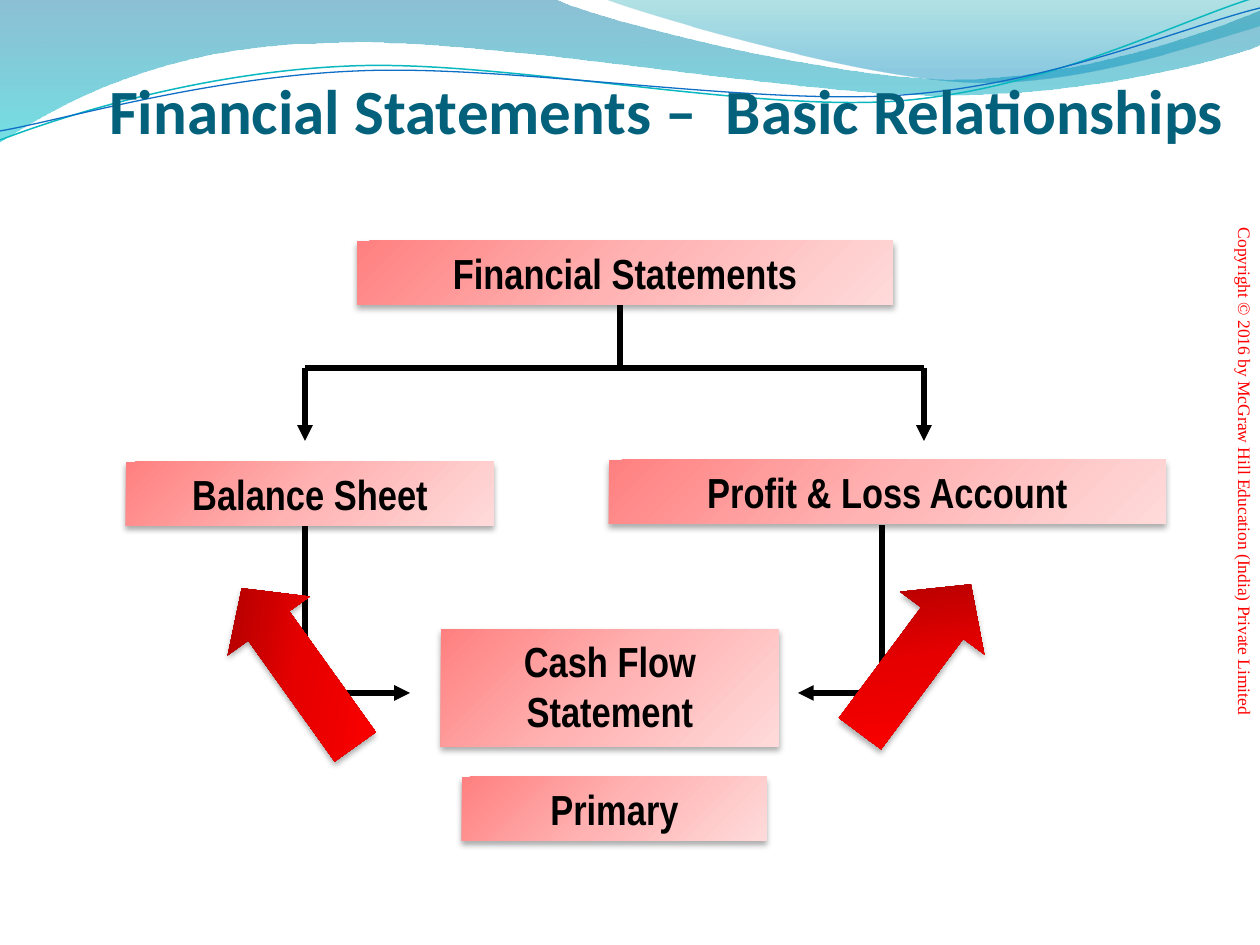
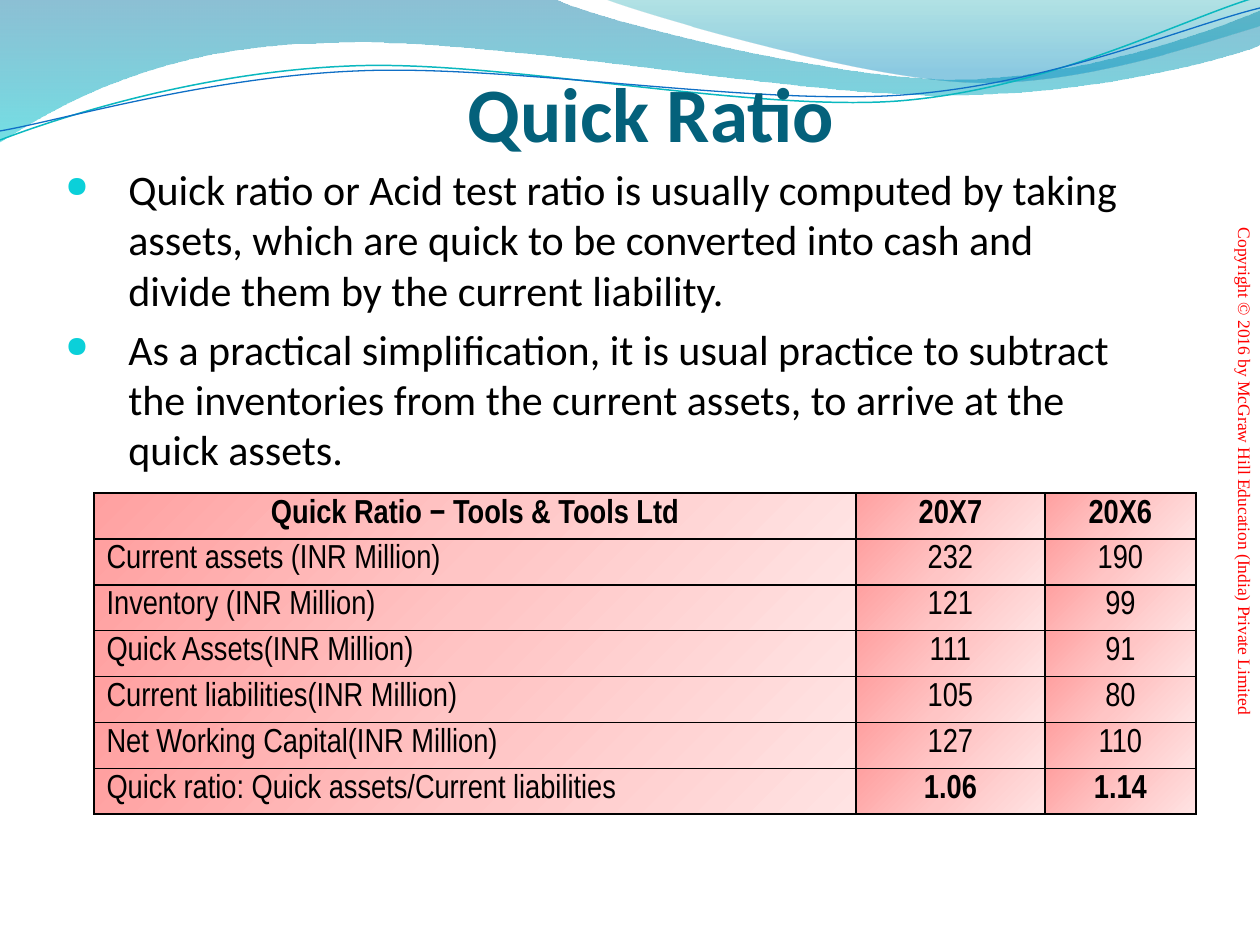
from lxml import etree
from pptx import Presentation
from pptx import util as u
from pptx.dml.color import RGBColor
from pptx.enum import shapes, text
from pptx.oxml.ns import qn

PX = 7257  # EMU in one px, 126 px to the inch

BLACK = RGBColor(0x00, 0x00, 0x00)
RED = RGBColor(0xFF, 0x00, 0x00)
TITLE_BLUE = RGBColor(0x04, 0x61, 0x7B)
BULLET = RGBColor(0x0B, 0xD0, 0xD9)
TEAL_LINE = RGBColor(0x0A, 0xB8, 0xBF)
BLUE_LINE = RGBColor(0x0F, 0x6F, 0xC6)

# Gradient stops: position, colour, opacity (both in percent)
WIDE_WAVE = [(0, RGBColor(0x00, 0x74, 0xA1), 45), (100, RGBColor(0x00, 0xC6, 0xCF), 55)]
RIGHT_WAVE = [(0, RGBColor(0x00, 0xA1, 0xA9), 30), (80, RGBColor(0x00, 0x8B, 0xBF), 45)]
PINK = [(0, RGBColor(0xFF, 0x80, 0x80), 100), (50, RGBColor(0xFF, 0xB3, 0xB3), 100),
        (100, RGBColor(0xFF, 0xDA, 0xDA), 100)]
PALE_PINK = [(0, RGBColor(0xFF, 0xA0, 0xA0), 100), (50, RGBColor(0xFF, 0xC5, 0xC5), 100),
             (100, RGBColor(0xFF, 0xE3, 0xE3), 100)]
DEEP_RED = [(0, RGBColor(0xA0, 0x00, 0x00), 100), (50, RGBColor(0xE6, 0x00, 0x00), 100),
            (100, RED, 100)]


def set_gradient(filled, props, stops, angle):
    """Give a shape or cell, with its spPr or tcPr, a linear gradient."""
    filled.fill.background()
    grad = etree.Element(qn("a:gradFill"), rotWithShape="1")
    gs_list = etree.SubElement(grad, qn("a:gsLst"))
    for pos, color, opacity in stops:
        gs = etree.SubElement(gs_list, qn("a:gs"), pos=str(pos * 1000))
        clr = etree.SubElement(gs, qn("a:srgbClr"), val=str(color))
        if opacity < 100:
            etree.SubElement(clr, qn("a:alpha"), val=str(opacity * 1000))
    etree.SubElement(grad, qn("a:lin"), ang=str(angle * 60000), scaled="0")
    props.replace(props.find(qn("a:noFill")), grad)


def set_font(p, name, size, color, bold=False):
    for r in p.runs:
        r.font.name = name
        r.font.size = u.Pt(size)
        r.font.bold = bold
        r.font.color.rgb = color


prs = Presentation()
prs.slide_width, prs.slide_height = u.Inches(10), u.Inches(7.5)
layout = prs.slide_layouts[5]
slides = []

# Titles
titles = [("Financial Statements –  Basic Relationships", 36, (-116, -10, 1565, 157)),
          ("Quick Ratio", 44, (84, 0, 1134, 158))]
for wording, size, box in titles:
    slide = prs.slides.add_slide(layout)
    slides.append(slide)
    title = slide.shapes.title
    title.left, title.top, title.width, title.height = [n * PX for n in box]
    tf = title.text_frame
    tf.text = wording
    tf.auto_size = text.MSO_AUTO_SIZE.NONE
    tf.vertical_anchor = text.MSO_ANCHOR.BOTTOM
    tf.margin_left = tf.margin_right = tf.margin_bottom = 0
    tf.margin_top = u.Inches(0.05)
    tf.paragraphs[0].alignment = text.PP_ALIGN.CENTER
    set_font(tf.paragraphs[0], "Calibri", size, TITLE_BLUE, True)

chart, ratio = slides

# Waves: a start, then straight (2 numbers) or Bézier (6 numbers) segments
waves = [
    (WIDE_WAVE, None, 0, (0, 0), [
        (554, -1), (600, 21, 837, 79, 955, 79), (1075, 79, 1207, 33, 1260, 11),
        (1261, 45), (1239, 55, 1096, 96, 940, 95), (784, 95, 481, 35, 324, 43),
        (163, 45, 58, 105, -1, 142)]),
    (RIGHT_WAVE, None, 0, (604, -1), [
        (641, 14, 859, 78, 969, 82), (1079, 87, 1211, 40, 1260, 26), (1260, 0)]),
    (None, TEAL_LINE, 0.85, (0, 140), [
        (60, 117, 199, 72, 349, 66), (498, 59, 747, 112, 898, 101),
        (1050, 89, 1182, 19, 1257, -3)]),
    (None, BLUE_LINE, 0.75, (0, 131), [
        (59, 121, 207, 77, 357, 71), (508, 64, 752, 106, 903, 95),
        (1053, 84, 1186, 26, 1260, 8)]),
]
shared = []
for stops, line_color, line_width, start, segments in waves:
    points = [seg[i:i + 2] for seg in segments for i in range(0, len(seg), 2)]
    builder = chart.shapes.build_freeform(*start, scale=PX)
    builder.add_line_segments(points, close=stops is not None)
    sp = builder.convert_to_shape()
    sp.shadow.inherit = False
    # Join the three points of each Bézier segment into one curve
    straight = iter(list(sp._element.iter(qn("a:lnTo"))))
    for seg in segments:
        steps = [next(straight) for _ in range(len(seg) // 2)]
        if len(steps) == 3:
            curve = etree.Element(qn("a:cubicBezTo"))
            steps[0].addprevious(curve)
            for step in steps:
                curve.append(step[0])
                step.getparent().remove(step)
    if stops:
        set_gradient(sp, sp._element.spPr, stops, 90)
        sp.line.fill.background()
    else:
        sp.fill.background()
        sp.line.color.rgb = line_color
        sp.line.width = u.Pt(line_width)
    shared.append(sp)

# Copyright line down the right edge
sp = chart.shapes.add_textbox(*[n * PX for n in (861, 440, 798, 63)])
sp.rotation = 90
tf = sp.text_frame
tf.word_wrap = True
tf.vertical_anchor = text.MSO_ANCHOR.BOTTOM
tf.text = "Copyright © 2016 by McGraw Hill Education (India) Private Limited"
tf.paragraphs[0].alignment = text.PP_ALIGN.CENTER
set_font(tf.paragraphs[0], "Times New Roman", 10, RED)
shared.append(sp)

# Both slides take the waves and the copyright line from their layout
for sp in shared:
    layout.shapes._spTree.append(sp._element)

# Slide 1: statement boxes, flow lines and block arrows
RECT, UP = shapes.MSO_SHAPE.RECTANGLE, shapes.MSO_SHAPE.UP_ARROW
statements = [
    ("Financial Statements", RECT, PINK, 0, (357, 241, 536, 64)),
    ("Cash Flow Statement", RECT, PINK, 0, (441, 629, 338, 118)),
    ("Profit & Loss Account", RECT, PINK, 0, (609, 460, 557, 64)),
    ("Balance Sheet", RECT, PINK, 0, (126, 462, 368, 64)),
    ("Primary", RECT, PINK, 0, (462, 777, 305, 64)),
]
block_arrows = [
    ("", UP, DEEP_RED, 324.4, (248, 570, 101, 195)),
    ("", UP, DEEP_RED, 36.6, (863, 566, 105, 186)),
]
flow_lines = [  # from x, y to x, y, arrowhead
    (305, 368, 924, 368, False), (620, 368, 620, 305, False),
    (305, 368, 305, 441, True), (924, 368, 924, 441, True),
    (305, 693, 305, 525, False), (882, 693, 882, 525, False),
    (305, 693, 410, 693, True), (882, 693, 798, 693, True),
]
for *ends, arrowhead in flow_lines:
    line = chart.shapes.add_connector(shapes.MSO_CONNECTOR.STRAIGHT, *[n * PX for n in ends])
    line.line.color.rgb = BLACK
    line.line.width = u.Pt(3)
    props = line._element.spPr
    if arrowhead:
        etree.SubElement(props.find(qn("a:ln")), qn("a:tailEnd"), type="triangle")
    etree.SubElement(props, qn("a:effectLst"))

for wording, kind, stops, turn, box in statements + block_arrows:
    sp = chart.shapes.add_shape(kind, *[n * PX for n in box])
    sp.rotation = turn
    set_gradient(sp, sp._element.spPr, stops, 45)
    sp.line.fill.background()
    sp.shadow.inherit = False
    shadow = etree.SubElement(sp._element.spPr.find(qn("a:effectLst")), qn("a:outerShdw"),
                              blurRad=str(u.Pt(3.5)), dist=str(u.Pt(2.2)),
                              dir="5400000", rotWithShape="0")
    clr = etree.SubElement(shadow, qn("a:srgbClr"), val=str(BLACK))
    etree.SubElement(clr, qn("a:alpha"), val="32000")
    if kind == UP:
        sp.adjustments[0], sp.adjustments[1] = 0.5, 0.46
    else:
        tf = sp.text_frame
        tf.word_wrap = True
        tf.vertical_anchor = text.MSO_ANCHOR.TOP
        tf.text = wording
        tf.paragraphs[0].alignment = text.PP_ALIGN.CENTER
        set_font(tf.paragraphs[0], "Arial Narrow", 24, BLACK, True)

# Slide 2: explanation
explanation = [
    "Quick ratio or Acid test ratio is usually computed by taking assets, which are quick "
    "to be converted into cash and divide them by the current liability.",
    "As a practical simplification, it is usual practice to subtract the inventories from "
    "the current assets, to arrive at the quick assets.",
]
tf = ratio.shapes.add_textbox(*[n * PX for n in (53, 157, 1103, 325)]).text_frame
tf.word_wrap = True
for i, wording in enumerate(explanation):
    p = tf.add_paragraph() if i else tf.paragraphs[0]
    p.text = wording
    pPr = p._p.get_or_add_pPr()
    pPr.set("marL", str(63 * PX))
    pPr.set("indent", str(-63 * PX))
    clr = etree.SubElement(pPr, qn("a:buClr"))
    etree.SubElement(clr, qn("a:srgbClr"), val=str(BULLET))
    etree.SubElement(pPr, qn("a:buSzPct"), val="70000")
    etree.SubElement(pPr, qn("a:buChar"), char="●")
    if i:
        p.space_before = u.Pt(5)
    set_font(p, "Calibri", 24, BLACK)

# Slide 2: ratio table
rows = [
    ("Quick Ratio − Tools & Tools Ltd", "20X7", "20X6"),
    ("Current assets (INR Million)", "232", "190"),
    ("Inventory (INR Million)", "121", "99"),
    ("Quick Assets(INR Million)", "111", "91"),
    ("Current liabilities(INR Million)", "105", "80"),
    ("Net Working Capital(INR Million)", "127", "110"),
    ("Quick ratio: Quick assets/Current liabilities", "1.06", "1.14"),
]
col_widths = (762, 189, 151)
ROW_HEIGHT = 44
table = ratio.shapes.add_table(len(rows), len(col_widths), 94 * PX, 493 * PX,
                               sum(col_widths) * PX, len(rows) * ROW_HEIGHT * PX).table
table.first_row = table.horz_banding = False
for col, width in zip(table.columns, col_widths):
    col.width = width * PX
for r, row in enumerate(rows):
    table.rows[r].height = ROW_HEIGHT * PX
    for c, value in enumerate(row):
        cell = table.cell(r, c)
        cell.margin_top, cell.margin_bottom = 6 * PX, 0
        cell.text = value
        p = cell.text_frame.paragraphs[0]
        label = c == 0 and r > 0
        p.alignment = text.PP_ALIGN.LEFT if label else text.PP_ALIGN.CENTER
        bold = r == 0 or (r == len(rows) - 1 and c > 0)
        set_font(p, "Arial Narrow", 19, BLACK, bold)
        tcPr = cell._tc.get_or_add_tcPr()
        set_gradient(cell, tcPr, PALE_PINK, 45)
        for i, side in enumerate(("a:lnL", "a:lnR", "a:lnT", "a:lnB")):
            ln = etree.Element(qn(side), w=str(u.Pt(1)))
            fill = etree.SubElement(ln, qn("a:solidFill"))
            etree.SubElement(fill, qn("a:srgbClr"), val=str(BLACK))
            tcPr.insert(i, ln)

prs.save("out.pptx")
